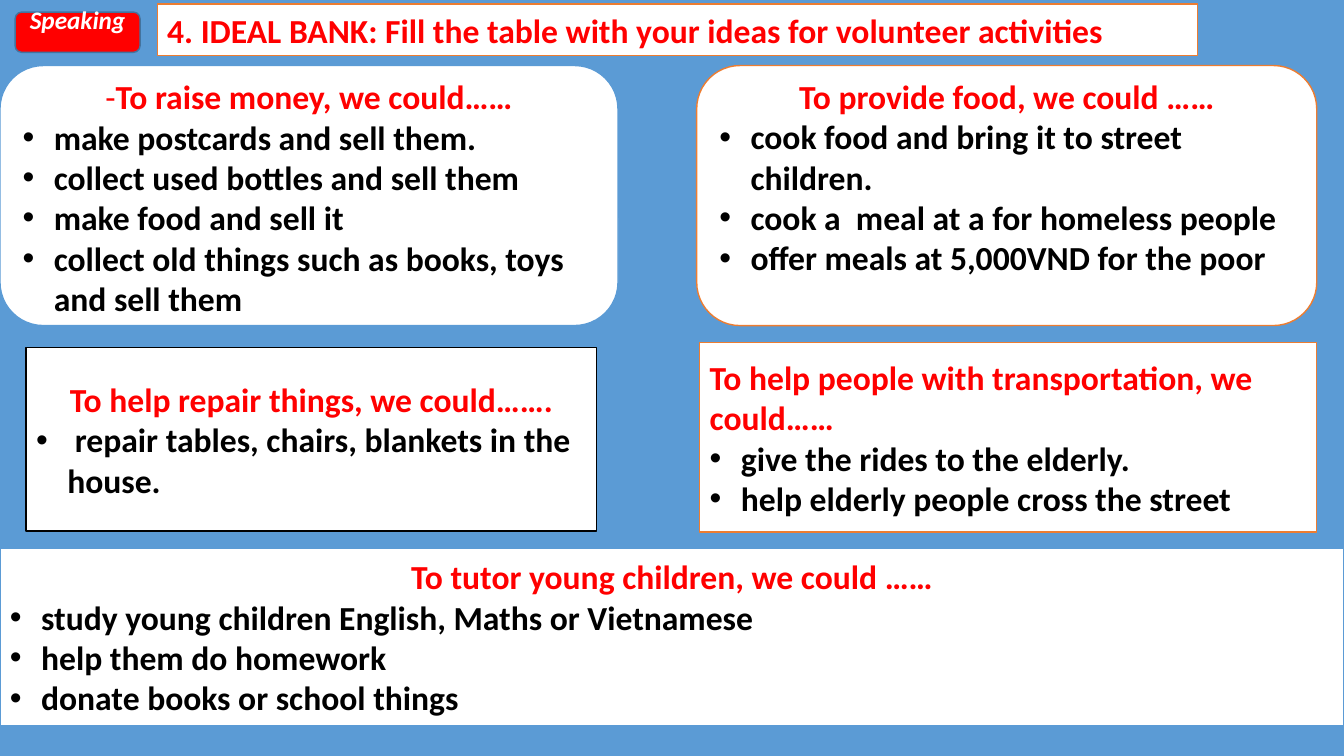
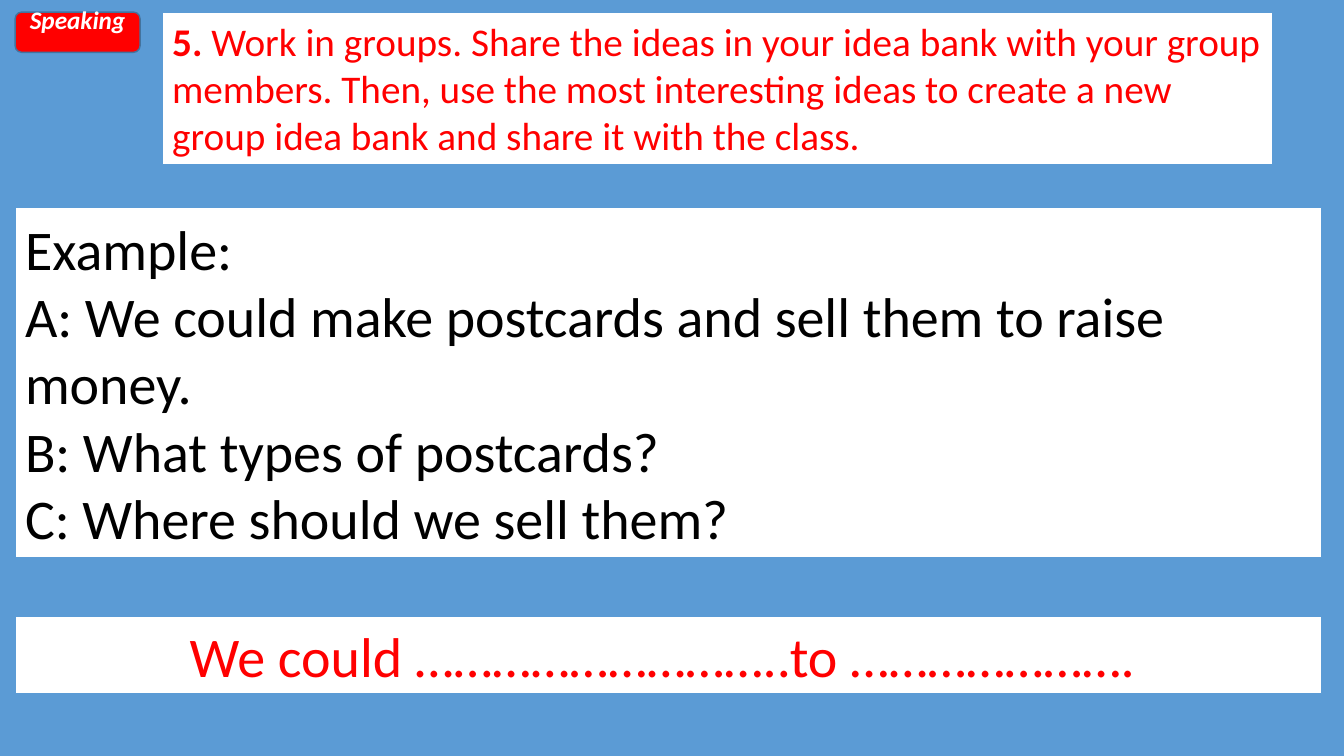
"""Build two speaking-lesson slides: an idea bank and a group task."""
import pptx
import pptx.util
import pptx.dml.color
import pptx.enum.shapes
import pptx.enum.text
import lxml.etree

Inches, Pt = pptx.util.Inches, pptx.util.Pt
KIND = pptx.enum.shapes.MSO_SHAPE
RECT, ROUND = KIND.RECTANGLE, KIND.ROUNDED_RECTANGLE
LEFT, MID = pptx.enum.text.PP_ALIGN.LEFT, pptx.enum.text.PP_ALIGN.CENTER
HUES = {"sky": "5B9BD5", "red": "FF0000", "white": "FFFFFF", "black": "000000",
        "orange": "ED7D31", "steel": "43739E"}
FONT = {"name": "Calibri", "size": Pt(24), "bold": True, "italic": False}
PLAIN = {"bold": False}
TASK = {"size": Pt(28)}
LARGE = {"size": Pt(40), "bold": False}
TAG = {"size": Pt(18), "italic": True}


def hue(name):
    """Return the named colour."""
    return pptx.dml.color.RGBColor.from_string(HUES[name])


def box(slide, kind, at, fill, edge, paras, pad=(0.05, 0.05)):
    """Add a shape; each paragraph is (align, colour, bullet, runs)."""
    shape = slide.shapes.add_shape(kind, *[Inches(n) for n in at])
    shape.shadow.inherit = False
    shape.fill.solid()
    shape.fill.fore_color.rgb = hue(fill)
    shape.line.color.rgb = hue(edge)
    shape.line.width = Pt(1)
    frame = shape.text_frame
    look = {"word_wrap": True, "vertical_anchor": pptx.enum.text.MSO_ANCHOR.MIDDLE,
            "margin_top": Inches(pad[0]), "margin_bottom": Inches(pad[1])}
    for key, val in look.items():
        setattr(frame, key, val)
    for i, (align, tint, dot, runs) in enumerate(paras):
        para = frame.add_paragraph() if i else frame.paragraphs[0]
        para.alignment = align
        if dot:
            props = para._p.get_or_add_pPr()
            props.set("marL", str(Inches(0.31)))
            props.set("indent", str(-Inches(0.31)))
            for tag, key, val in [("a:buFont", "typeface", "Arial"), ("a:buChar", "char", "•")]:
                lxml.etree.SubElement(props, pptx.oxml.ns.qn(tag)).set(key, val)
        for text, style in runs:
            run = para.add_run()
            run.text = text
            run.font.color.rgb = hue(tint)
            for key, val in {**FONT, **style}.items():
                setattr(run.font, key, val)


deck = pptx.Presentation()
deck.slide_width, deck.slide_height = Inches(13.33), Inches(7.5)
bank, group = [deck.slides.add_slide(deck.slide_layouts[6]) for _ in range(2)]

for slide in (bank, group):
    slide.background.fill.solid()
    slide.background.fill.fore_color.rgb = hue("sky")
    box(slide, ROUND, (0.15, 0.12, 1.24, 0.4), "red", "steel",
        [(MID, "white", False, [("Speaking", TAG)])], (0.05, 0.3))

cards = [
    (ROUND, (0, 0.65, 6.13, 2.58), "sky", (0.08, 0.05), MID,
     [("-", PLAIN), ("To raise money, we could……", {})],
     ["make postcards and sell them.", "collect used bottles and sell them",
      "make food and sell it", "collect old things such as books, toys and sell them"]),
    (ROUND, (6.91, 0.65, 6.15, 2.58), "orange", (0.05, 0.42), MID,
     [("To provide food, we could ……", {})],
     ["cook food and bring it to street children.",
      "cook a  meal at a for homeless people", "offer meals at 5,000VND for the poor"]),
    (RECT, (0.26, 3.45, 5.66, 1.82), "black", (0.05, 0.05), MID,
     [("To help repair things, we could…….", {})],
     [" repair tables, chairs, blankets in the house."]),
    (RECT, (6.94, 3.4, 6.12, 1.88), "orange", (0.05, 0.05), LEFT,
     [("To help people with transportation, we could……", {})],
     ["give the rides to the elderly.", "help elderly people cross the street"]),
    (RECT, (0, 5.44, 13.33, 1.76), "sky", (0.05, 0.05), MID,
     [("To tutor young children, we could ……", {})],
     ["study young children English, Maths or Vietnamese",
      "help them do homework", "donate books or school things"]),
]
for kind, at, edge, pad, align, head, ideas in cards:
    paras = [(align, "red", False, head)]
    paras += [(LEFT, "black", True, [(idea, {})]) for idea in ideas]
    box(bank, kind, at, "white", edge, paras, pad)

title = "4. IDEAL BANK: Fill the table with your ideas for volunteer activities"
box(bank, RECT, (1.56, 0.04, 10.32, 0.51), "white", "orange",
    [(LEFT, "red", False, [(title, {})])])

task = ("Work in groups. Share the ideas in your idea bank with your group members. "
        "Then, use the most interesting ideas to create a new group idea bank "
        "and share it with the class.")
talk = ["Example:", "A: We could make postcards and sell them to raise money.",
        "B: What types of postcards?", "C: Where should we sell them?"]
panels = [
    ((1.61, 0.12, 11.01, 1.51),
     [(LEFT, "red", False, [("5. ", TASK), (task, {**TASK, **PLAIN})])]),
    ((0.15, 2.06, 12.96, 3.47),
     [(LEFT, "black", False, [(line, LARGE)]) for line in talk]),
    ((0.15, 6.11, 12.96, 0.77),
     [(MID, "red", False, [("We could ………………………..to …………………. ", LARGE)])]),
]
for at, paras in panels:
    box(group, RECT, at, "white", "sky", paras)

deck.save("out.pptx")
